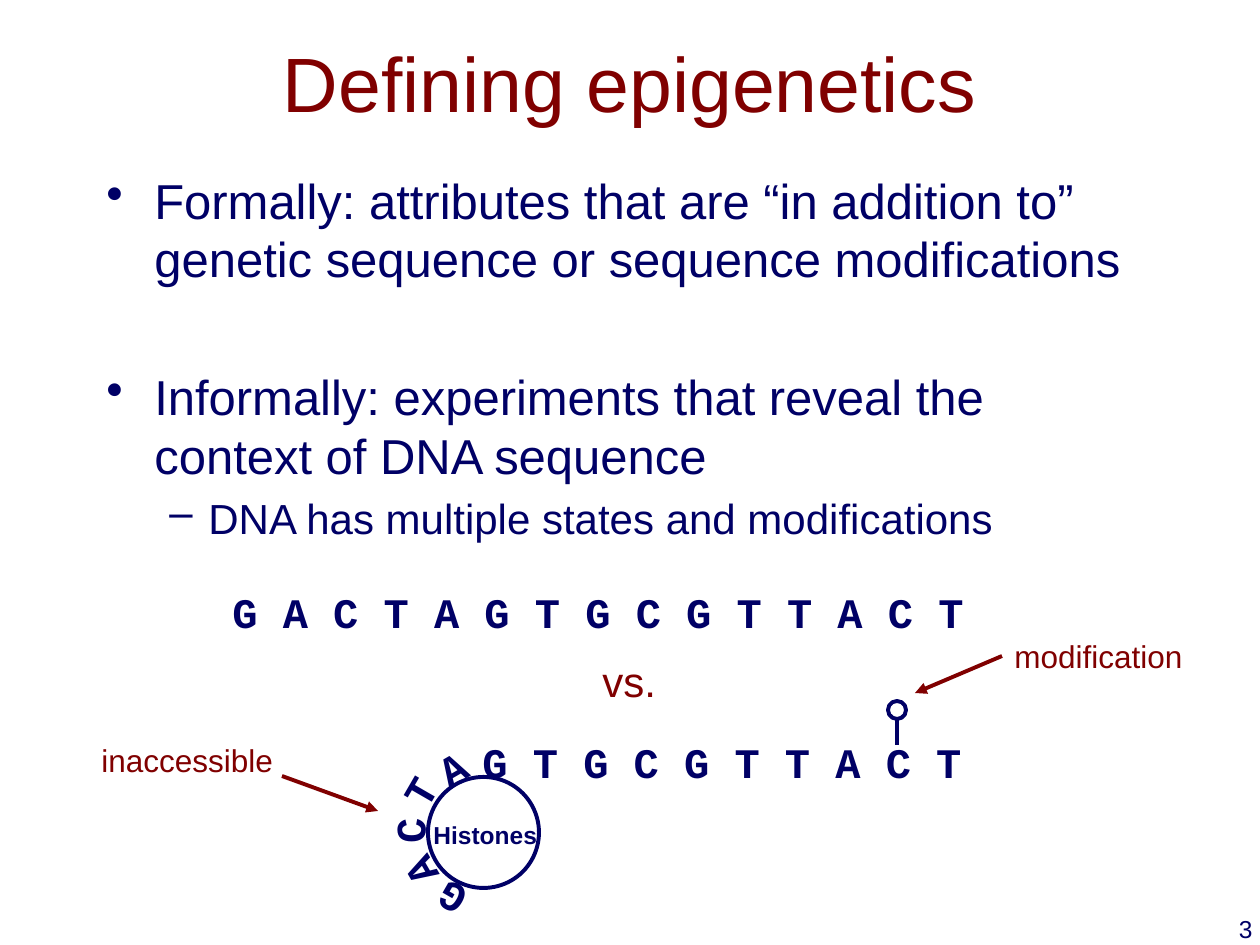
from dataclasses import dataclass

from lxml.etree import SubElement
from pptx import Presentation
from pptx.dml.color import RGBColor
from pptx.enum.shapes import MSO_CONNECTOR as Connector, MSO_SHAPE as Shape
from pptx.enum.text import MSO_ANCHOR as Anchor, MSO_AUTO_SIZE as AutoSize, PP_ALIGN as Align
from pptx.oxml.ns import qn
from pptx.util import Emu, Pt

EMU_PER_PX = 914400 / 126
NAVY, MAROON = "000066", "800000"
SANS, MONO = "Arial", "Courier New"
LINE_WIDTH = Pt(2.25)


@dataclass
class Label:
    text: str
    left: int
    top: int
    width: int
    height: int
    size: int
    color: str = NAVY
    font: str = SANS
    bold: bool = False
    rotation: int = 0
    align: Align = Align.LEFT
    anchor: Anchor = Anchor.TOP
    wrap: bool = False


@dataclass
class Bullet:
    text: str
    mark: str
    size: int
    margin: int
    hang: int
    space_before: float


@dataclass
class Line:
    start: tuple[int, int]
    end: tuple[int, int]
    color: str
    arrow: bool = False


def px(length: int) -> Emu:
    return Emu(round(length * EMU_PER_PX))


def rgb(color: str) -> RGBColor:
    return RGBColor.from_string(color)


def style(para, size: int, color: str, font: str = SANS, bold: bool = False) -> None:
    para.font.size = Pt(size)
    para.font.color.rgb = rgb(color)
    para.font.name = font
    para.font.bold = bold


def add_label(page, label: Label) -> None:
    box = page.shapes.add_textbox(*map(px, (label.left, label.top, label.width, label.height)))
    box.rotation = label.rotation
    frame = box.text_frame
    frame.word_wrap = label.wrap
    frame.auto_size = AutoSize.NONE if label.wrap else AutoSize.SHAPE_TO_FIT_TEXT
    frame.vertical_anchor = label.anchor
    para = frame.paragraphs[0]
    para.text = label.text
    para.alignment = label.align
    style(para, label.size, label.color, label.font, label.bold)


def add_bullets(page, bullets: list[Bullet]) -> None:
    frame = page.shapes.add_textbox(px(94), px(164), px(1072), px(567)).text_frame
    frame.word_wrap = True
    for index, bullet in enumerate(bullets):
        para = frame.add_paragraph() if index else frame.paragraphs[0]
        para.text = bullet.text
        para.space_before = Pt(bullet.space_before)
        style(para, bullet.size, NAVY)
        props = para._p.get_or_add_pPr()
        props.set("marL", str(px(bullet.margin)))
        props.set("indent", str(-px(bullet.hang)))
        mark = props.makeelement(qn("a:buChar"), {"char": bullet.mark})
        props.find(qn("a:defRPr")).addprevious(mark)


def add_ring(page, left: int, top: int, diameter: int) -> None:
    ring = page.shapes.add_shape(Shape.OVAL, *map(px, (left, top, diameter, diameter)))
    ring.shadow.inherit = False
    ring.fill.background()
    ring.line.color.rgb = rgb(NAVY)
    ring.line.width = LINE_WIDTH


def add_line(page, line: Line) -> None:
    connector = page.shapes.add_connector(Connector.STRAIGHT, *map(px, line.start + line.end))
    connector.line.color.rgb = rgb(line.color)
    connector.line.width = LINE_WIDTH
    if line.arrow:
        SubElement(connector.line._get_or_add_ln(), qn("a:tailEnd"), type="triangle")
    SubElement(connector._element.spPr, qn("a:effectLst"))


BULLETS = [
    Bullet("Formally: attributes that are “in addition to” genetic sequence or sequence modifications",
           "•", 28, 48, 48, 5.6),
    Bullet("Informally: experiments that reveal the context of DNA sequence", "•", 28, 48, 48, 45),
    Bullet("DNA has multiple states and modifications", "–", 24, 102, 39, 4.8),
]

# Letter, left, top and rotation of the bases wound around the histones
WOUND_BASES = [
    ("A", 427, 736, 330),
    ("T", 394, 760, 300),
    ("C", 384, 799, 270),
    ("A", 394, 840, 240),
    ("G", 426, 868, 210),
]

LABELS = [
    Label("Defining epigenetics", 94, 3, 1072, 157, 44, MAROON,
          align=Align.CENTER, anchor=Anchor.MIDDLE, wrap=True),
    Label("3", 1003, 908, 262, 63, 14, align=Align.RIGHT, wrap=True),
    Label("G A C T A G T G C G T T A C T", 220, 580, 762, 63, 24, font=MONO, bold=True),
    Label("vs.", 590, 649, 79, 63, 24, MAROON),
    Label("G T G C G T T A C T", 470, 730, 508, 63, 24, font=MONO, bold=True),
    Label("Histones", 421, 814, 130, 43, 14, bold=True),
    Label("modification", 1002, 631, 195, 50, 18, MAROON),
    Label("inaccessible", 89, 735, 199, 50, 18, MAROON),
] + [
    Label(base, left, top, 50, 63, 24, font=MONO, bold=True, rotation=rotation)
    for base, left, top, rotation in WOUND_BASES
]

RINGS = [(888, 701, 18), (428, 777, 111)]

LINES = [
    Line((897, 719), (897, 745), NAVY),
    Line((1002, 656), (915, 693), MAROON, arrow=True),
    Line((282, 776), (378, 811), MAROON, arrow=True),
]


def main() -> None:
    deck = Presentation()
    deck.slide_width, deck.slide_height = px(1260), px(945)
    page = deck.slides.add_slide(deck.slide_layouts[6])
    add_bullets(page, BULLETS)
    for ring in RINGS:
        add_ring(page, *ring)
    for line in LINES:
        add_line(page, line)
    for label in LABELS:
        add_label(page, label)
    deck.save("out.pptx")


if __name__ == "__main__":
    main()
